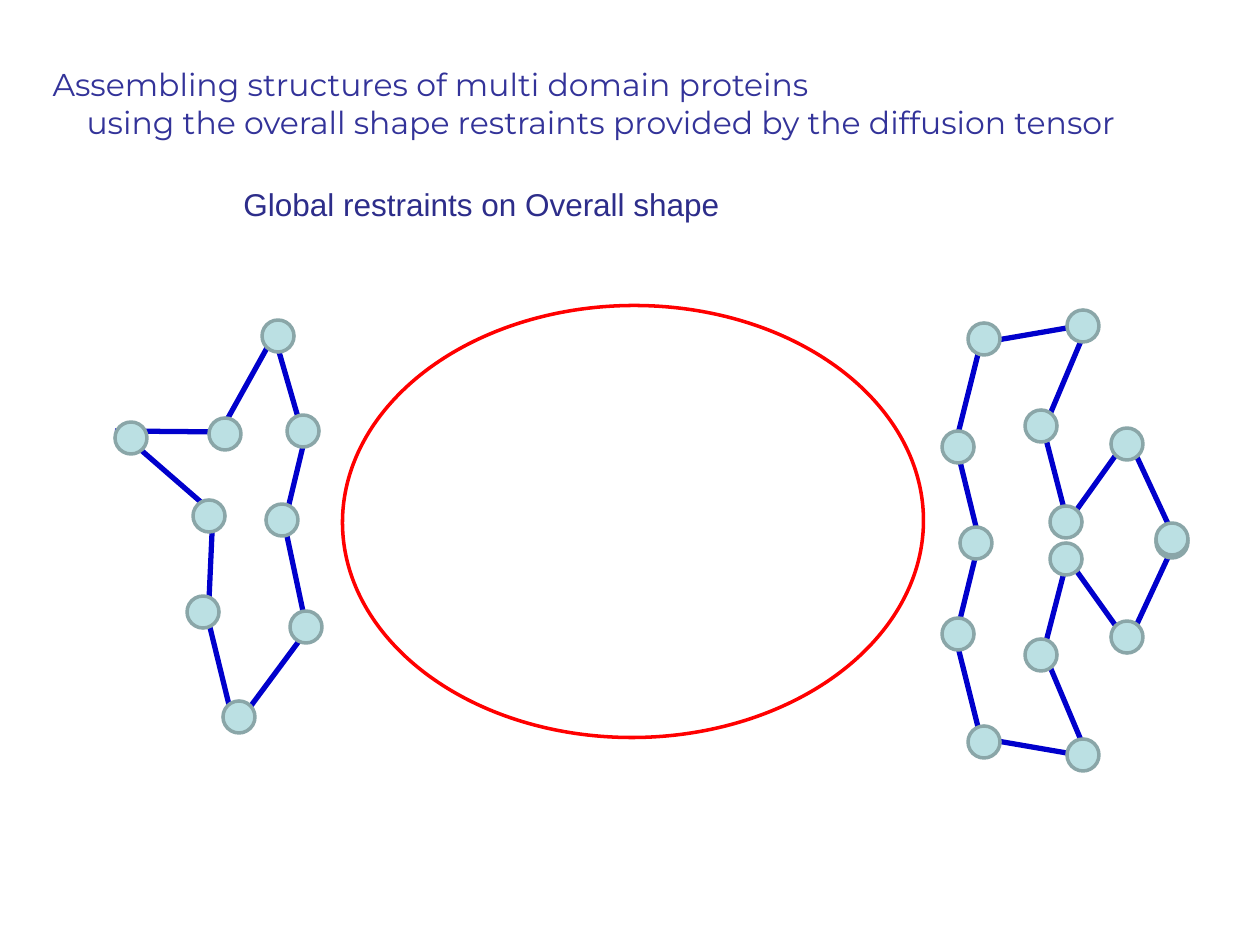
import dataclasses
import typing

import lxml.etree
import pptx
import pptx.dml.color
import pptx.enum.shapes
import pptx.enum.text
import pptx.oxml.ns
import pptx.util

PX_PER_INCH = 126
BEAD_SIZE = 32
MIRROR_SUM = 1081


@dataclasses.dataclass(frozen=True)
class Bead:
    x: int
    y: int

    def mirrored(self) -> "Bead":
        return Bead(self.x, MIRROR_SUM - self.y)


@dataclasses.dataclass(frozen=True)
class Bond:
    x1: int
    y1: int
    x2: int
    y2: int

    def mirrored(self) -> "Bond":
        return Bond(self.x1, MIRROR_SUM - self.y1, self.x2, MIRROR_SUM - self.y2)


@dataclasses.dataclass(frozen=True)
class Chain:
    bonds: tuple[Bond, ...]
    beads: tuple[Bead, ...]

    def mirrored(self) -> "Chain":
        return Chain(
            tuple(bond.mirrored() for bond in self.bonds),
            tuple(bead.mirrored() for bead in self.beads),
        )


LEFT_DOMAIN = Chain(
    bonds=(
        Bond(239, 722, 305, 633),
        Bond(307, 630, 284, 522),
        Bond(284, 525, 310, 417),
        Bond(304, 438, 273, 331),
        Bond(277, 330, 223, 427),
        Bond(227, 432, 115, 431),
        Bond(126, 437, 210, 510),
        Bond(213, 512, 208, 622),
        Bond(205, 607, 232, 717),
    ),
    beads=(
        Bead(306, 627),
        Bead(282, 520),
        Bead(303, 431),
        Bead(278, 336),
        Bead(225, 434),
        Bead(131, 438),
        Bead(209, 516),
        Bead(203, 612),
        Bead(239, 717),
    ),
)

RIGHT_LOWER_HALF = Chain(
    bonds=(
        Bond(1090, 757, 980, 738),
        Bond(1177, 538, 1130, 639),
        Bond(1068, 557, 1040, 665),
        Bond(1043, 650, 1086, 752),
        Bond(983, 747, 956, 639),
        Bond(955, 640, 982, 530),
        Bond(1128, 643, 1063, 552),
    ),
    beads=(
        Bead(1172, 542),
        Bead(1041, 655),
        Bead(958, 634),
        Bead(1083, 755),
        Bead(1127, 637),
        Bead(1066, 559),
        Bead(984, 742),
    ),
)

RIGHT_HINGE = Chain(bonds=(), beads=(Bead(976, 543),))


def px(length: int) -> pptx.util.Emu:
    return pptx.util.Emu(round(length * 914400 / PX_PER_INCH))


def color(value: str) -> pptx.dml.color.RGBColor:
    return pptx.dml.color.RGBColor.from_string(value)


def place(box: typing.Any, left: int, top: int, width: int, height: int) -> None:
    box.left, box.top, box.width, box.height = map(px, (left, top, width, height))


def write(
    box: typing.Any, *lines: str, font: str, size: int, fill: str, indent: int = 0
) -> None:
    frame = box.text_frame
    frame.word_wrap = True
    frame.auto_size = pptx.enum.text.MSO_AUTO_SIZE.NONE
    frame.vertical_anchor = pptx.enum.text.MSO_ANCHOR.TOP
    for index, line in enumerate(lines):
        para = frame.add_paragraph() if index else frame.paragraphs[0]
        para.alignment = pptx.enum.text.PP_ALIGN.LEFT
        para._p.get_or_add_pPr().set("marL", str(px(indent * index)))
        span = para.add_run()
        span.text = line
        span.font.name = font
        span.font.size = pptx.util.Pt(size)
        span.font.color.rgb = color(fill)


def draw_bond(page: typing.Any, bond: Bond) -> None:
    line = page.shapes.add_connector(
        pptx.enum.shapes.MSO_CONNECTOR.STRAIGHT,
        px(bond.x1), px(bond.y1), px(bond.x2), px(bond.y2),
    )
    line.line.color.rgb = color("0000CC")
    line.line.width = pptx.util.Pt(3)
    lxml.etree.SubElement(line._element.spPr, pptx.oxml.ns.qn("a:effectLst"))


def draw_ellipse(
    page: typing.Any, left: int, top: int, width: int, height: int,
    outline: str, fill: str | None = None,
) -> typing.Any:
    ellipse = page.shapes.add_shape(
        pptx.enum.shapes.MSO_SHAPE.OVAL, px(left), px(top), px(width), px(height)
    )
    ellipse.shadow.inherit = False
    if fill:
        ellipse.fill.solid()
        ellipse.fill.fore_color.rgb = color(fill)
    else:
        ellipse.fill.background()
    ellipse.line.color.rgb = color(outline)
    ellipse.line.width = pptx.util.Pt(2)
    return ellipse


def draw_chain(page: typing.Any, chain: Chain) -> None:
    for bond in chain.bonds:
        draw_bond(page, bond)
    for bead in chain.beads:
        draw_ellipse(
            page, bead.x - BEAD_SIZE // 2, bead.y - BEAD_SIZE // 2,
            BEAD_SIZE, BEAD_SIZE, outline="8AA6A8", fill="BBE0E3",
        )


def main() -> None:
    deck = pptx.Presentation()
    deck.slide_width, deck.slide_height = px(1260), px(945)
    page = deck.slides.add_slide(deck.slide_layouts[5])

    title = page.shapes.title
    place(title, 40, 59, 1200, 90)
    write(
        title,
        "Assembling structures of multi domain proteins",
        "using the overall shape restraints provided by the diffusion tensor",
        font="Montserrat", size=18, fill="333399", indent=34,
    )

    for chain in (RIGHT_LOWER_HALF, RIGHT_LOWER_HALF.mirrored(), RIGHT_HINGE, LEFT_DOMAIN):
        draw_chain(page, chain)

    overall_shape = draw_ellipse(page, 417, 231, 432, 581, outline="FF0000")
    overall_shape.rotation = 269.6

    subtitle = page.shapes.add_textbox(px(231), px(179), px(533), px(90))
    write(
        subtitle, "Global restraints on Overall shape",
        font="Arial", size=18, fill="2D2D8A",
    )

    deck.save("out.pptx")


if __name__ == "__main__":
    main()
